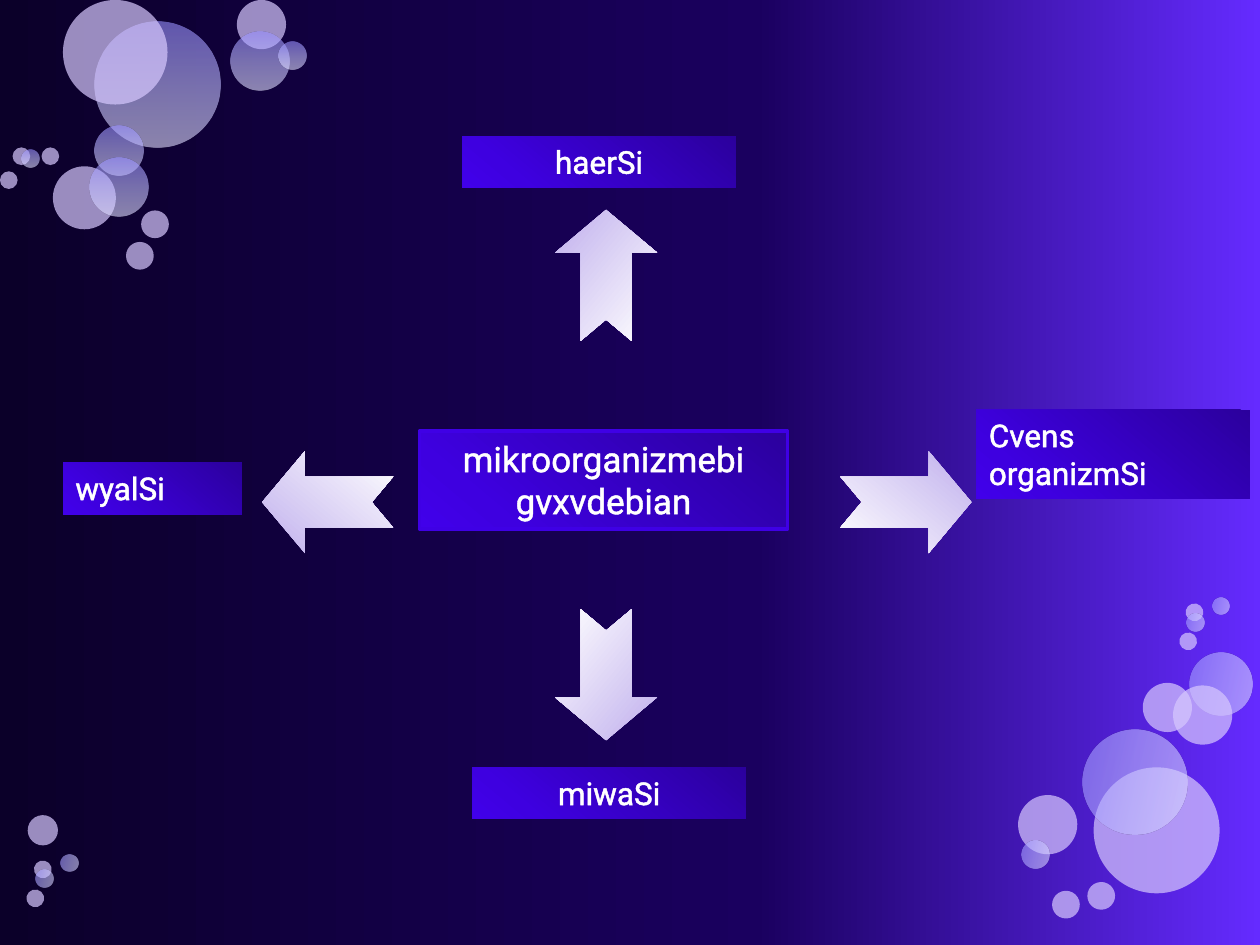
from dataclasses import dataclass

import lxml.etree
import pptx
import pptx.dml.color
import pptx.enum.shapes
import pptx.enum.text
import pptx.oxml.ns
import pptx.util

RGBColor = pptx.dml.color.RGBColor
Inches = pptx.util.Inches
Shapes = pptx.enum.shapes.MSO_SHAPE
Align = pptx.enum.text.PP_ALIGN
qn = pptx.oxml.ns.qn

WHITE = RGBColor(0xFF, 0xFF, 0xFF)
BORDER = RGBColor(0x3F, 0x00, 0xE5)
LILAC = RGBColor(0xD7, 0xC8, 0xFE)
NIGHT = RGBColor(0x0B, 0x00, 0x29)
INDIGO = RGBColor(0x1A, 0x00, 0x5F)
VIOLET = RGBColor(0x65, 0x2B, 0xFF)
BLUE_DEEP = RGBColor(0x98, 0x90, 0xFF)
BLUE_MID = RGBColor(0xBF, 0xBB, 0xFF)
BLUE_PALE = RGBColor(0xE0, 0xDE, 0xFF)
LABEL_DARK = RGBColor(0x2B, 0x00, 0x9D)
LABEL_MID = RGBColor(0x3E, 0x00, 0xE0)
LABEL_LIGHT = RGBColor(0x41, 0x00, 0xEA)
ARROW_TINT = RGBColor(0xC0, 0xAF, 0xED)
FONT = "Roboto"
TURN = 103.3


@dataclass(frozen=True)
class Paint:
    stops: tuple[tuple[int, RGBColor], ...]
    angle: int = 0
    opacity: int = 100


@dataclass(frozen=True)
class Bubble:
    left: float
    top: float
    size: float
    shaded: bool = False


@dataclass(frozen=True)
class Label:
    text: str
    left: float
    top: float
    width: float
    height: float
    align: Align = Align.CENTER
    size: int = 18


@dataclass(frozen=True)
class Branch:
    label: Label
    arrow_left: float
    arrow_top: float
    rotation: int


BACKDROP = Paint(((0, NIGHT), (60, INDIGO), (100, VIOLET)))
PLAIN_BUBBLE = Paint(((0, LILAC),), opacity=70)
SHADED_BUBBLE = Paint(((0, BLUE_DEEP), (50, BLUE_MID), (100, BLUE_PALE)), 90, 60)
LABEL_PAINT = Paint(((0, LABEL_DARK), (80, LABEL_MID), (100, LABEL_LIGHT)), 130)
ARROW_PAINT = Paint(((0, ARROW_TINT), (100, WHITE)), 130)

UPRIGHT_BUBBLES = (
    Bubble(0.75, 0.17, 1, True),
    Bubble(0.42, 1.32, 0.5),
    Bubble(0.75, 1, 0.39, True),
    Bubble(0.71, 1.25, 0.47, True),
    Bubble(0.5, 0, 0.83),
    Bubble(1.88, 0, 0.39),
    Bubble(1.83, 0.25, 0.47, True),
    Bubble(2.21, 0.33, 0.22, True),
    Bubble(1.12, 1.67, 0.22),
    Bubble(0.1, 1.17, 0.14),
    Bubble(1, 1.92, 0.22),
    Bubble(0, 1.36, 0.14),
    Bubble(0.17, 1.19, 0.14, True),
    Bubble(0.33, 1.17, 0.14),
)
TURNED_BUBBLES = (
    Bubble(8.68, 6.09, 1),
    Bubble(9.44, 5.18, 0.5, True),
    Bubble(9.07, 5.42, 0.39),
    Bubble(9.31, 5.44, 0.47),
    Bubble(8.59, 5.79, 0.83, True),
    Bubble(0.22, 6.47, 0.24),
    Bubble(8.08, 6.31, 0.47),
    Bubble(8.11, 6.67, 0.22, True),
    Bubble(8.35, 7.07, 0.22),
    Bubble(9.41, 4.79, 0.14),
    Bubble(8.63, 7, 0.22),
    Bubble(9.62, 4.74, 0.14, True),
    Bubble(9.42, 4.87, 0.14, True),
    Bubble(9.36, 5.02, 0.14),
    Bubble(0.27, 6.83, 0.14),
    Bubble(0.48, 6.78, 0.14, True),
    Bubble(0.28, 6.9, 0.14, True),
    Bubble(0.21, 7.06, 0.14),
)
CENTER = Label("mikroorganizmebi gvxvdebian", 3.33, 3.42, 2.92, 0.78, size=20)
BRANCHES = (
    Branch(Label("Cvens organizmSi", 7.75, 3.25, 2.17, 0.71, Align.LEFT), 6.67, 3.58, 0),
    Branch(Label("haerSi", 3.67, 1.08, 2.17, 0.41), 4.29, 1.78, 270),
    Branch(Label("wyalSi", 0.5, 3.67, 1.42, 0.41, Align.LEFT), 2.08, 3.58, 180),
    Branch(Label("miwaSi", 3.75, 6.09, 2.17, 0.41), 4.29, 4.95, 90),
)


def add_color(parent, color: RGBColor, opacity: int = 100) -> None:
    node = lxml.etree.SubElement(parent, qn("a:srgbClr"), val=str(color))
    if opacity < 100:
        lxml.etree.SubElement(node, qn("a:alpha"), val=str(opacity * 1000))


def apply_paint(fill, holder, paint: Paint) -> None:
    fill.solid()
    solid = holder.find(".//" + qn("a:solidFill"))
    if len(paint.stops) == 1:
        add_color(solid, paint.stops[0][1], paint.opacity)
        return
    gradient = solid.makeelement(qn("a:gradFill"), {"rotWithShape": "1"})
    stop_list = lxml.etree.SubElement(gradient, qn("a:gsLst"))
    for position, color in paint.stops:
        stop = lxml.etree.SubElement(stop_list, qn("a:gs"), pos=str(position * 1000))
        add_color(stop, color, paint.opacity)
    lxml.etree.SubElement(gradient, qn("a:lin"), ang=str(paint.angle * 60000), scaled="0")
    solid.getparent().replace(solid, gradient)


def add_painted(shapes, kind: Shapes, left: float, top: float, width: float, height: float, paint: Paint):
    shape = shapes.add_shape(kind, Inches(left), Inches(top), Inches(width), Inches(height))
    shape.shadow.inherit = False
    apply_paint(shape.fill, shape.element.spPr, paint)
    shape.line.fill.background()
    return shape


def add_bubble(shapes, bubble: Bubble, turned: bool) -> None:
    paint = SHADED_BUBBLE if bubble.shaded else PLAIN_BUBBLE
    shape = add_painted(shapes, Shapes.OVAL, bubble.left, bubble.top, bubble.size, bubble.size, paint)
    if turned:
        shape.rotation = TURN
        shape.element.spPr.xfrm.set("flipV", "1")


def add_label(shapes, label: Label):
    box = add_painted(shapes, Shapes.RECTANGLE, label.left, label.top, label.width, label.height, LABEL_PAINT)
    frame = box.text_frame
    frame.text = label.text
    frame.word_wrap = True
    frame.auto_size = pptx.enum.text.MSO_AUTO_SIZE.SHAPE_TO_FIT_TEXT
    frame.vertical_anchor = pptx.enum.text.MSO_ANCHOR.TOP
    para = frame.paragraphs[0]
    para.alignment = label.align
    span = para.runs[0]
    span.font.name = FONT
    span.font.size = pptx.util.Pt(label.size)
    span.font.color.rgb = WHITE
    properties = span.font._element
    outline = properties.makeelement(qn("a:ln"), {"w": str(pptx.util.Pt(1.45))})
    add_color(lxml.etree.SubElement(outline, qn("a:solidFill")), WHITE)
    properties.insert(0, outline)
    return box


def add_branch(shapes, branch: Branch) -> None:
    group = shapes.add_group_shape()
    arrow = add_painted(group.shapes, Shapes.NOTCHED_RIGHT_ARROW,
                        branch.arrow_left, branch.arrow_top, 1.04, 0.81, ARROW_PAINT)
    arrow.adjustments[0] = 0.5
    arrow.adjustments[1] = 0.42
    arrow.rotation = branch.rotation
    add_label(group.shapes, branch.label)


def main() -> None:
    deck = pptx.Presentation()
    deck.slide_width, deck.slide_height = Inches(10), Inches(7.5)
    page = deck.slides.add_slide(deck.slide_layouts[6])
    apply_paint(page.background.fill, page.element, BACKDROP)
    for bubble in UPRIGHT_BUBBLES:
        add_bubble(page.shapes, bubble, turned=False)
    for bubble in TURNED_BUBBLES:
        add_bubble(page.shapes, bubble, turned=True)
    center = add_label(page.shapes, CENTER)
    center.line.color.rgb = BORDER
    center.line.width = pptx.util.Pt(2)
    for branch in BRANCHES:
        add_branch(page.shapes, branch)
    deck.save("out.pptx")


if __name__ == "__main__":
    main()
